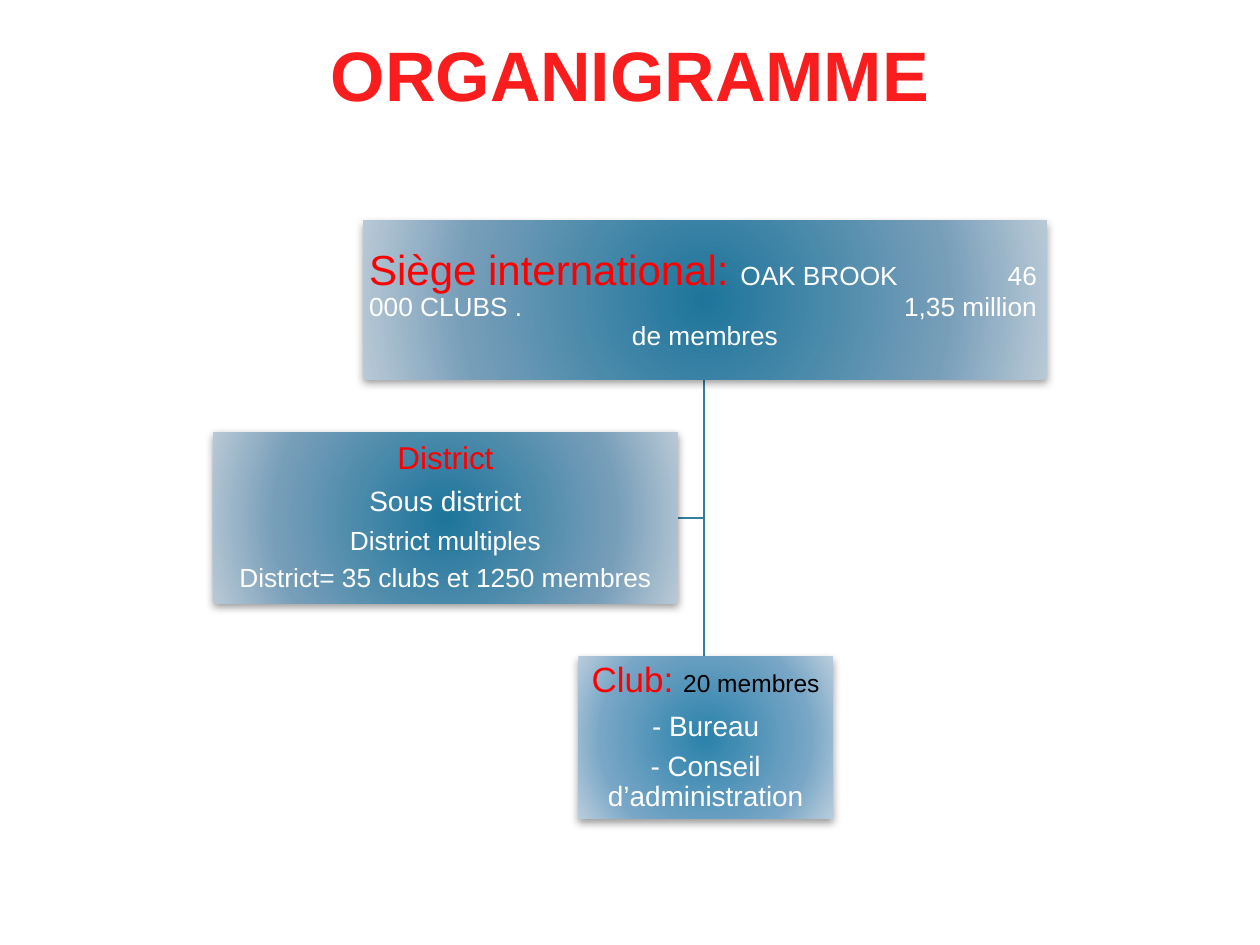
from lxml.etree import SubElement
from pptx import Presentation
from pptx.dml.color import RGBColor
from pptx.enum.shapes import MSO_CONNECTOR, MSO_SHAPE
from pptx.enum.text import MSO_ANCHOR, PP_ALIGN
from pptx.oxml import parse_xml
from pptx.oxml.ns import nsdecls, qn
from pptx.util import Inches, Pt

RED, WHITE, BLACK = "FF0000", "FFFFFF", "000000"
DEEP = ("1D759B", "779EB9", "B9C9D6")
LIGHT = ("2B82AB", "78A6C6", "B9CDDC")
STOPS = (0, 69, 100)


def color(value):
    return RGBColor.from_string(value)


def apply(target, values):
    """Set each named attribute of target."""
    for name, value in values.items():
        setattr(target, name, value)


class Chart:
    """Style of the organisation chart and the slide it is drawn on."""

    font_name = "Arial"
    line_color = "357EA0"

    def __init__(self, page):
        self.page = page

    def fill_text(self, frame, paras, margin, line_spacing=0.9, gap=0.35):
        """Fill frame; each para is (alignment, right tab or None, spans)."""
        sides = ("margin_left", "margin_right", "margin_top", "margin_bottom")
        apply(frame, {"word_wrap": True, **dict.fromkeys(sides, Inches(margin))})
        for index, (align, tab, spans) in enumerate(paras):
            para = frame.paragraphs[0] if index == 0 else frame.add_paragraph()
            if tab:
                tabs = SubElement(para._p.get_or_add_pPr(), qn("a:tabLst"))
                SubElement(tabs, qn("a:tab"), pos=str(Inches(tab)), algn="r")
            largest = max(size for _, size, _ in spans)
            apply(para, {"alignment": align, "line_spacing": line_spacing,
                         "space_before": Pt(0), "space_after": Pt(gap * largest)})
            for text, size, hue in spans:
                span = para.add_run()
                span.text = text
                apply(span.font, {"name": self.font_name, "size": Pt(size)})
                span.font.color.rgb = color(hue)

    def title(self, text, at):
        box = self.page.shapes.add_textbox(*map(Inches, at))
        spans = [(text, 40, "FA1D1D")]
        self.fill_text(box.text_frame, [(PP_ALIGN.CENTER, None, spans)], 0.13, 1.0, 0)
        box.text_frame.vertical_anchor = MSO_ANCHOR.TOP
        box.text_frame.paragraphs[0].runs[0].font.bold = True

    def node(self, at, hues, paras, margin=0.01, gap=0.35):
        """Add a box with a radial gradient, a soft shadow and text."""
        box = self.page.shapes.add_shape(MSO_SHAPE.RECTANGLE, *map(Inches, at))
        stops = "".join(
            f'<a:gs pos="{stop * 1000}"><a:srgbClr val="{hue}"/></a:gs>'
            for stop, hue in zip(STOPS, hues))
        box._element.spPr.find(qn("a:prstGeom")).addnext(parse_xml(
            f'<a:gradFill {nsdecls("a")} rotWithShape="1"><a:gsLst>{stops}</a:gsLst>'
            '<a:path path="circle"><a:fillToRect l="100000" t="100000" '
            'r="100000" b="100000"/></a:path></a:gradFill>'))
        box.line.fill.background()
        box.shadow.inherit = False
        box._element.spPr.find(qn("a:effectLst")).append(parse_xml(
            f'<a:outerShdw {nsdecls("a")} blurRad="{Pt(5)}" dist="{Pt(2)}" '
            'dir="5400000" rotWithShape="0"><a:srgbClr val="000000">'
            '<a:alpha val="40000"/></a:srgbClr></a:outerShdw>'))
        box.text_frame.vertical_anchor = MSO_ANCHOR.MIDDLE
        self.fill_text(box.text_frame, paras, margin, gap=gap)

    def stroke(self, shape):
        shape.line.width = Pt(1)
        shape.line.color.rgb = color(self.line_color)

    def trunk(self, x, top, bottom):
        link = self.page.shapes.add_connector(
            MSO_CONNECTOR.STRAIGHT, *map(Inches, (x, top, x, bottom)))
        self.stroke(link)
        SubElement(link._element.spPr, qn("a:effectLst"))

    def branch(self, start, *points):
        builder = self.page.shapes.build_freeform(*map(Inches, start), scale=1.0)
        builder.add_line_segments(
            [tuple(map(Inches, point)) for point in points], close=False)
        link = builder.convert_to_shape()
        link.fill.background()
        link.shadow.inherit = False
        self.stroke(link)


def centered(*spans):
    return PP_ALIGN.CENTER, None, spans


def spread(*spans):
    return PP_ALIGN.LEFT, 5.3, spans


def main():
    deck = Presentation()
    apply(deck, {"slide_width": Inches(10), "slide_height": Inches(7.5)})
    chart = Chart(deck.slides.add_slide(deck.slide_layouts[6]))

    chart.title("ORGANIGRAMME", (0.6, 0.12, 8.8, 1.46))
    axis = 5.59
    chart.branch((axis, 3.01), (axis, 4.11), (5.38, 4.11))
    chart.trunk(axis, 3.01, 5.21)
    chart.node((2.88, 1.75, 5.43, 1.26), DEEP, [
        spread(("Siège international: ", 24, RED), ("OAK BROOK\t46", 15, WHITE)),
        spread(("000 CLUBS .\t1,35 million", 15, WHITE)),
        centered(("de membres", 15, WHITE)),
    ], margin=0.05, gap=0)
    chart.node((4.59, 5.21, 2.02, 1.29), LIGHT, [
        centered(("Club: ", 20, RED), ("20 membres", 14, BLACK)),
        centered(("- Bureau", 16, WHITE)),
        centered(("- Conseil d’administration", 16, WHITE)),
    ])
    chart.node((1.69, 3.43, 3.69, 1.36), DEEP, [
        centered(("District", 18, RED)),
        centered(("Sous district", 16, WHITE)),
        centered(("District multiples", 15, WHITE)),
        centered(("District= 35 clubs et 1250 membres", 15, WHITE)),
    ])
    deck.save("out.pptx")


if __name__ == "__main__":
    main()
